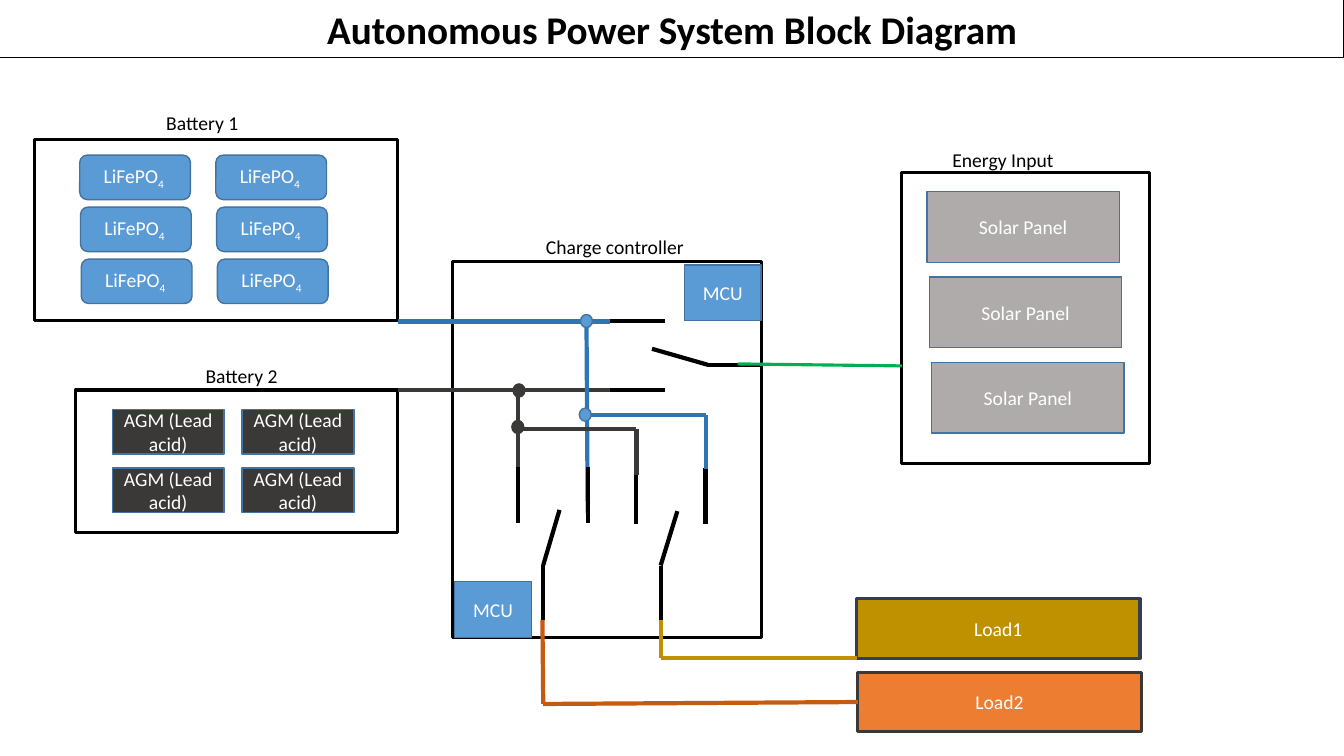
from itertools import pairwise

from lxml import etree
from pptx import Presentation
from pptx.dml.color import RGBColor
from pptx.enum import shapes, text
from pptx.oxml.ns import qn
from pptx.util import Cm, Pt

THEME = {
    "font": "Calibri", "title": 28, "body": 14,
    "black": "000000", "white": "FFFFFF", "blue": "5B9BD5", "edge": "43739E",
    "dark": "3B3838", "gray": "AFABAB", "wire blue": "2E75B6", "green": "00B050",
    "gold": "BF9000", "navy": "333F50", "orange": "ED7D31", "rust": "C55A11",
}

# Content: all lengths in centimetres
SLIDE = (33.87, 19.05)
TITLE = "Autonomous Power System Block Diagram"

# label, label place, frame place
UNITS = [
    ("Battery 1", (3.94, 2.67, 3.53, 0.86), (0.86, 3.51, 9.17, 4.57)),
    ("Battery 2", (4.93, 9.04, 3.53, 0.86), (1.9, 9.83, 8.13, 3.58)),
    ("Energy Input", (23.75, 3.61, 4.6, 0.86), (22.71, 4.34, 6.25, 7.34)),
    ("Charge controller", (13.51, 5.79, 4.6, 0.86), (11.4, 6.6, 7.8, 9.47)),
]

# text, subscript, preset, fill, columns, rows, first cell, column step, row step, row shift
CELLS = [
    ("LiFePO", "4 ", "ROUNDED_RECTANGLE", "blue", 2, 3, (2.01, 3.91, 2.79, 1.12), 3.43, 1.31, 0.02),
    ("AGM (Lead acid)", "", "RECTANGLE", "dark", 2, 2, (2.83, 10.32, 2.82, 1.12), 3.27, 1.47, 0),
    ("Solar Panel", "", "RECTANGLE", "gray", 1, 3, (23.36, 4.83, 4.85, 1.78), 0, 2.15, 0.06),
]

# text, place, fill, line, line width
BLOCKS = [
    ("MCU", (17.25, 6.68, 1.93, 1.4), "blue", "edge", 1),
    ("MCU", (11.46, 14.66, 1.93, 1.4), "blue", "edge", 1),
    ("Load1", (21.59, 15.09, 7.14, 1.5), "gold", "navy", 2.25),
    ("Load2", (21.62, 16.94, 7.14, 1.5), "orange", "dark", 2.25),
]

# colour, points along the wire; a block name as last point joins its left side
WIRES = [
    # Supply buses
    ("wire blue", [(10.03, 8.1), (15.37, 8.1)]),
    ("dark", [(10.03, 9.83), (15.37, 9.83)]),
    ("wire blue", [(14.78, 8.1), (14.81, 12.93)]),
    ("dark", [(13.06, 9.83), (13.06, 11.76)]),
    # Input switch
    ("black", [(15.37, 8.08), (16.76, 8.08)]),
    ("black", [(15.37, 9.83), (16.76, 9.83)]),
    ("black", [(16.43, 8.79), (17.83, 9.19), (19.23, 9.19)]),
    ("green", [(22.73, 9.22), (18.59, 9.17)]),
    # Output switches
    ("black", [(13.06, 11.76), (13.06, 13.18)]),
    ("black", [(14.81, 11.76), (14.81, 13.18)]),
    ("black", [(16.03, 11.79), (16.03, 13.21)]),
    ("black", [(17.78, 11.79), (17.78, 13.21)]),
    ("black", [(14.1, 12.85), (13.69, 14.24), (13.69, 15.62)]),
    ("black", [(17.07, 12.88), (16.65, 14.25), (16.65, 15.65)]),
    # Branches to the second output switch
    ("dark", [(13.06, 10.82), (16.04, 10.82), (16.04, 11.96)]),
    ("wire blue", [(14.77, 10.46), (17.79, 10.46), (17.79, 11.81)]),
    # Load feeds
    ("gold", [(16.65, 15.62), (16.65, 16.59), (21.59, 16.59)]),
    ("rust", [(13.67, 15.62), (13.69, 17.74), "Load2"]),
]
WIRE_WIDTHS = {"green": 2.25}

# centre, fill, line
DOT = (0.3, 0.33)
DOTS = [
    ((14.78, 8.09), "blue", "edge"), ((13.08, 9.84), "dark", "dark"),
    ((13.05, 10.76), "dark", "dark"), ((14.75, 10.45), "blue", "edge"),
]


def color(name):
    return RGBColor.from_string(THEME[name])


def write(frame, words, sub="", size="body", ink="white", bold=False,
          align="CENTER", anchor="MIDDLE"):
    frame.word_wrap = True
    frame.vertical_anchor = text.MSO_ANCHOR[anchor]
    paragraph = frame.paragraphs[0]
    paragraph.alignment = text.PP_ALIGN[align]
    for part in filter(None, (words, sub)):
        run = paragraph.add_run()
        run.text = part
        font = run.font
        font.name, font.size, font.bold = THEME["font"], Pt(THEME[size]), bold
        font.color.rgb = color(ink)
        if part == sub:
            run._r.get_or_add_rPr().set("baseline", "-25000")


def add_block(slide, place, fill=None, line="edge", width=1, preset="RECTANGLE"):
    block = slide.shapes.add_shape(shapes.MSO_SHAPE[preset], *map(Cm, place))
    block.shadow.inherit = False
    if fill:
        block.fill.solid()
        block.fill.fore_color.rgb = color(fill)
    else:
        block.fill.background()
    block.line.color.rgb = color(line)
    block.line.width = Pt(width)
    return block


def add_wire(slide, ink, start, end, blocks):
    target = blocks.get(end)
    finish = start if target else end
    wire = slide.shapes.add_connector(shapes.MSO_CONNECTOR.STRAIGHT, *map(Cm, start + finish))
    if target:
        wire.end_connect(target, 1)
    wire.line.color.rgb = color(ink)
    wire.line.width = Pt(WIRE_WIDTHS.get(ink, 3))
    etree.SubElement(wire._element.spPr, qn("a:effectLst"))


def main():
    deck = Presentation()
    deck.slide_width, deck.slide_height = map(Cm, SLIDE)
    slide = deck.slides.add_slide(deck.slide_layouts[6])

    # Title bar
    title = add_block(slide, (0, 0, SLIDE[0], 1.45), line="black", width=0.75)
    write(title.text_frame, TITLE, size="title", ink="black", bold=True)

    # Cells inside the batteries and the energy input
    for words, sub, preset, fill, columns, rows, first, dx, dy, shift in CELLS:
        left, top, width, height = first
        for row in range(rows):
            for column in range(columns):
                place = (left + column * dx + row * shift, top + row * dy, width, height)
                cell = add_block(slide, place, fill, preset=preset)
                write(cell.text_frame, words, sub)

    # Unit frames with their labels
    for words, label_place, frame_place in UNITS:
        add_block(slide, frame_place, line="black", width=2.25)
        label = slide.shapes.add_textbox(*map(Cm, label_place))
        write(label.text_frame, words, ink="black", align="LEFT", anchor="TOP")

    # Controllers and loads
    blocks = {}
    for words, place, fill, line, width in BLOCKS:
        blocks[words] = add_block(slide, place, fill, line, width)
        write(blocks[words].text_frame, words)

    # Wiring
    for ink, points in WIRES:
        for start, end in pairwise(points):
            add_wire(slide, ink, start, end, blocks)

    # Junction dots
    for (x, y), fill, line in DOTS:
        add_block(slide, (x - DOT[0] / 2, y - DOT[1] / 2, *DOT), fill, line, preset="OVAL")

    deck.save("out.pptx")


if __name__ == "__main__":
    main()
